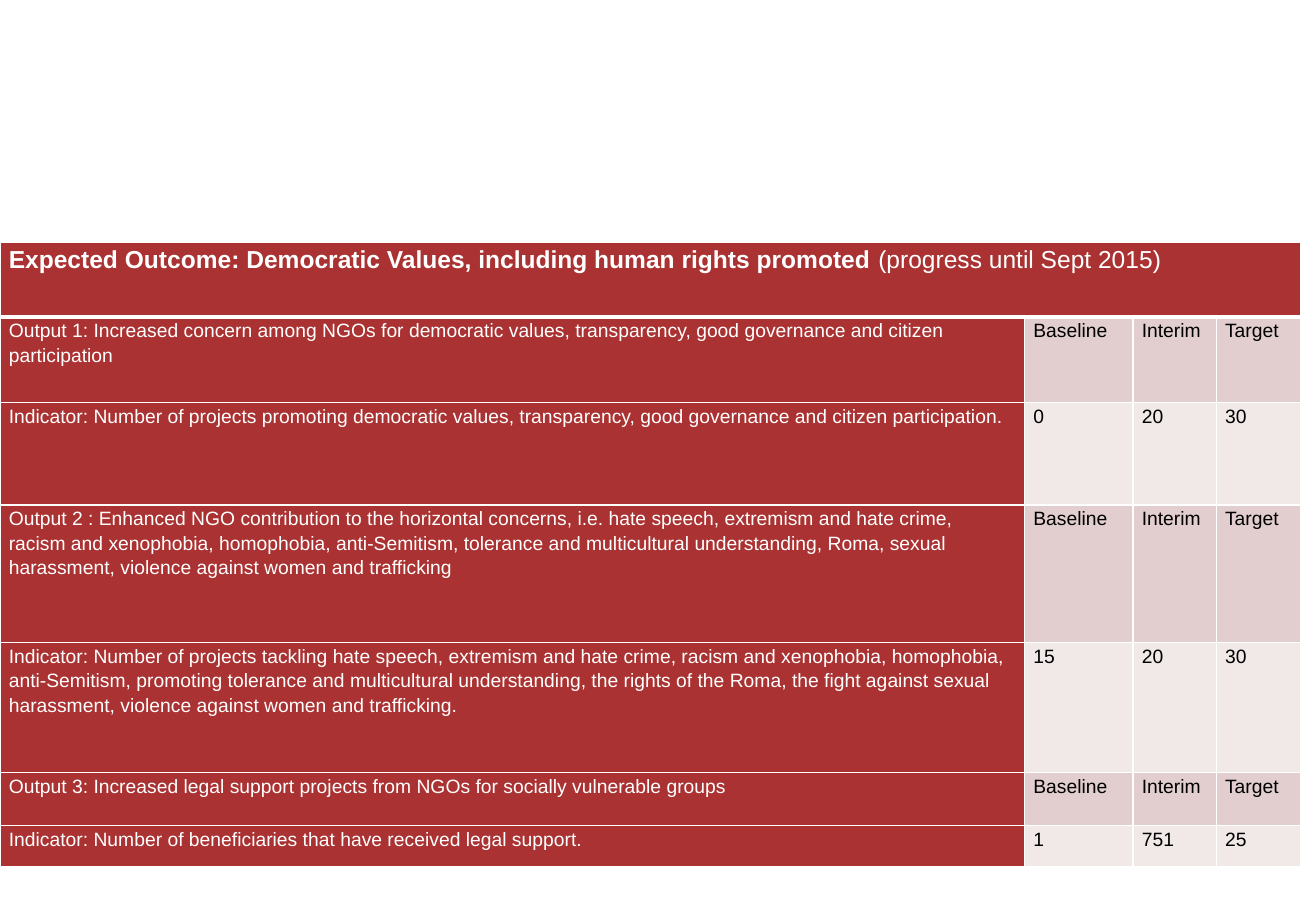
"""Build a slide with a results table of outputs, indicators and targets."""
from lxml import etree
from pptx import Presentation
from pptx import util as u
from pptx.dml.color import RGBColor
from pptx.oxml.ns import qn

TITLE = [
    ("Expected Outcome: Democratic Values, including human rights promoted ", True),
    ("(progress until Sept 2015)", False),
]
HEADINGS = ("Baseline", "Interim", "Target")
ROWS = [
    ("Output 1: Increased concern among NGOs for democratic values, transparency, "
     "good governance and citizen participation", *HEADINGS),
    ("Indicator: Number of projects promoting democratic values, transparency, "
     "good governance and citizen participation.", "0", "20", "30"),
    ("Output 2 : Enhanced NGO contribution to the horizontal concerns, i.e. hate speech, "
     "extremism and hate crime, racism and xenophobia, homophobia, anti-Semitism, "
     "tolerance and multicultural understanding, Roma, sexual harassment, "
     "violence against women and trafficking", *HEADINGS),
    ("Indicator: Number of projects tackling hate speech, extremism and hate crime, "
     "racism and xenophobia, homophobia, anti-Semitism, promoting tolerance and "
     "multicultural understanding, the rights of the Roma, the fight against sexual "
     "harassment, violence against women and trafficking.", "15", "20", "30"),
    ("Output 3: Increased legal support projects from NGOs for socially vulnerable groups",
     *HEADINGS),
    ("Indicator: Number of beneficiaries that have received legal support.",
     "1", "751", "25"),
]
COLUMN_WIDTHS = (8.12, 0.86, 0.66, 0.67)
ROW_HEIGHTS = (0.59, 0.68, 0.81, 1.09, 1.03, 0.42, 0.33)
RED, WHITE, BLACK = "AA3232", "FFFFFF", "000000"
BANDS = ("E2CECE", "F1E8E8")


def color(value):
    return RGBColor.from_string(value)


def style_cell(cell, fill, bottom_width=1):
    cell.margin_left = cell.margin_right = u.Inches(0.07)
    cell.margin_top = cell.margin_bottom = 0
    properties = cell._tc.get_or_add_tcPr()
    for side, width in (("L", 1), ("R", 1), ("T", 1), ("B", bottom_width)):
        line = etree.SubElement(properties, qn(f"a:ln{side}"), w=str(u.Pt(width)))
        solid = etree.SubElement(line, qn("a:solidFill"))
        etree.SubElement(solid, qn("a:srgbClr"), val=WHITE)
    cell.fill.solid()
    cell.fill.fore_color.rgb = color(fill)


def write_cell(cell, runs, size, text_color):
    paragraph = cell.text_frame.paragraphs[0]
    paragraph.line_spacing = 1.15
    paragraph.space_after = u.Pt(10)
    paragraph.font.name = "Arial"
    paragraph.font.size = u.Pt(size)
    paragraph.font.color.rgb = color(text_color)
    for words, bold in runs:
        run = paragraph.add_run()
        run.text = words
        run.font.name = "Arial"
        run.font.size = u.Pt(size)
        run.font.bold = bold
        run.font.color.rgb = color(text_color)


def main():
    presentation = Presentation()
    presentation.slide_width = u.Inches(10.43)
    presentation.slide_height = u.Inches(7.28)
    slide = presentation.slides.add_slide(presentation.slide_layouts[6])
    table = slide.shapes.add_table(
        len(ROW_HEIGHTS), len(COLUMN_WIDTHS), 0, u.Inches(1.92),
        u.Inches(sum(COLUMN_WIDTHS)), u.Inches(sum(ROW_HEIGHTS))).table
    table.first_row = table.horz_banding = False
    for column, width in zip(table.columns, COLUMN_WIDTHS):
        column.width = u.Inches(width)
    for row, height in zip(table.rows, ROW_HEIGHTS):
        row.height = u.Inches(height)

    for cell in table.rows[0].cells:
        style_cell(cell, RED, bottom_width=3)
    title = table.cell(0, 0)
    title.merge(table.cell(0, len(COLUMN_WIDTHS) - 1))
    write_cell(title, TITLE, 14, WHITE)

    for row_index, row in enumerate(ROWS):
        for column_index, words in enumerate(row):
            cell = table.cell(row_index + 1, column_index)
            is_label = column_index == 0
            style_cell(cell, RED if is_label else BANDS[row_index % 2])
            write_cell(cell, [(words, False)], 11, WHITE if is_label else BLACK)

    presentation.save("out.pptx")


if __name__ == "__main__":
    main()
